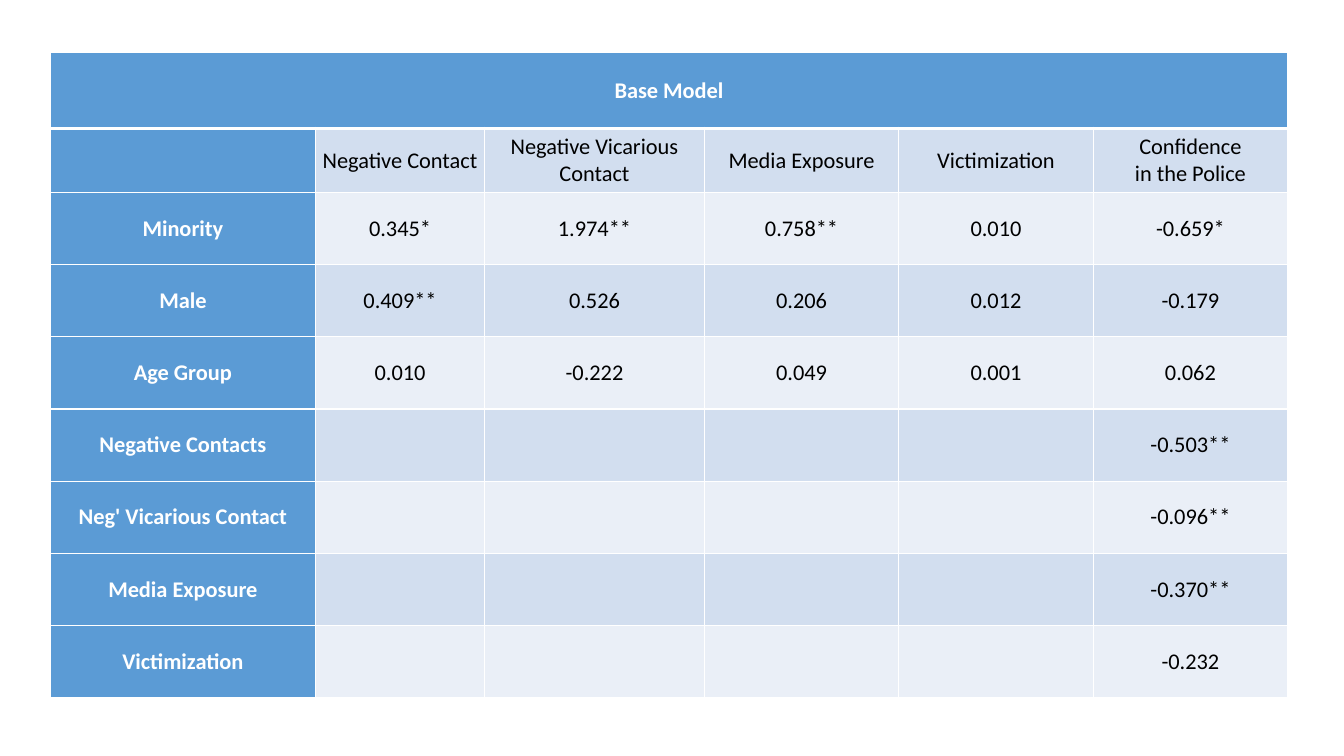
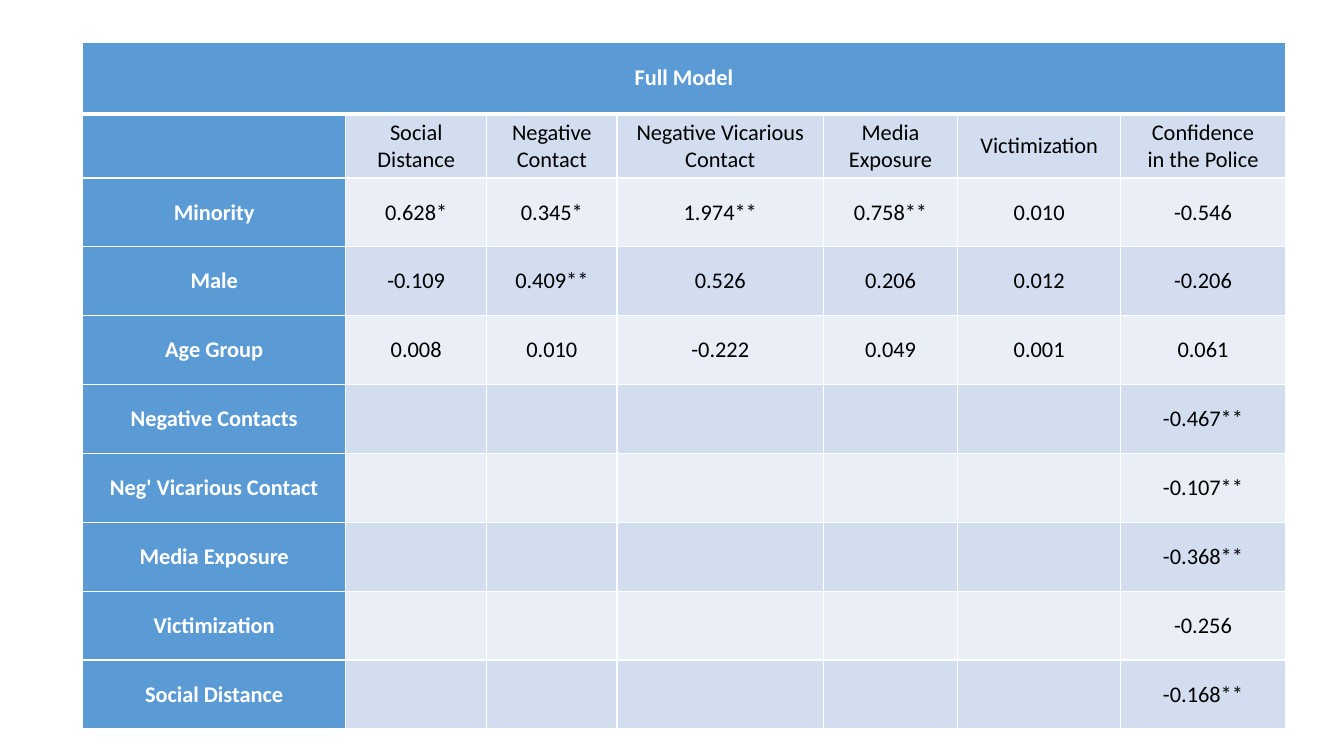
"""Build two slides of regression tables: the base model and the full model."""
from lxml import etree
from pptx import Presentation
from pptx.dml.color import RGBColor
from pptx.enum.text import MSO_ANCHOR, PP_ALIGN
from pptx.oxml.ns import qn
from pptx.util import Emu, Pt

MIDDLE = MSO_ANCHOR.MIDDLE
CENTER = PP_ALIGN.CENTER
BLANK_LAYOUT = 6
EMU_PER_PX = 3810
EMU_PER_POINT = 12700

FONT = "Calibri"
TEXT_SIZE = 16
WHITE = "FFFFFF"
BLACK = "000000"
HEADER_BLUE = "5B9BD5"
BAND_FILLS = ("EAEFF7", "D2DEEF")
THIN, THICK = 1, 3
CELL_INSET = 17
HEADING_HEIGHT = 152

BASE_HEADINGS = ["Negative Contact", "Negative Vicarious Contact",
                 "Media Exposure", "Victimization",
                 "Confidence\nin the Police"]

BASE_MODEL = {
    "title": "Base Model",
    "left": 120, "top": 125,
    "widths": [631, 403, 523, 463, 463, 463],
    "title_height": 181, "row_height": 172,
    "headings": BASE_HEADINGS,
    "rows": [
        ("Minority", "0.345*", "1.974**", "0.758**", "0.010", "-0.659*"),
        ("Male", "0.409**", "0.526", "0.206", "0.012", "-0.179"),
        ("Age Group", "0.010", "-0.222", "0.049", "0.001", "0.062"),
        ("Negative Contacts", "-0.503**"),
        ("Neg' Vicarious Contact", "-0.096**"),
        ("Media Exposure", "-0.370**"),
        ("Victimization", "-0.232"),
    ],
}

FULL_MODEL = {
    "title": "Full Model",
    "left": 197, "top": 101,
    "widths": [626, 336, 310, 492, 319, 389, 391],
    "title_height": 171, "row_height": 164,
    "headings": ["Social Distance"] + BASE_HEADINGS,
    "rows": [
        ("Minority", "0.628*", "0.345*", "1.974**", "0.758**", "0.010", "-0.546"),
        ("Male", "-0.109", "0.409**", "0.526", "0.206", "0.012", "-0.206"),
        ("Age Group", "0.008", "0.010", "-0.222", "0.049", "0.001", "0.061"),
        ("Negative Contacts", "-0.467**"),
        ("Neg' Vicarious Contact", "-0.107**"),
        ("Media Exposure", "-0.368**"),
        ("Victimization", "-0.256"),
        ("Social Distance", "-0.168**"),
    ],
}


def px(length):
    """Turn whole pixels into EMU."""
    return Emu(length * EMU_PER_PX)


def color(hex_string):
    """Turn a hex string into a colour."""
    return RGBColor.from_string(hex_string)


def set_borders(cell, top=THIN, bottom=THIN):
    """Draw white lines, with widths in points, round a cell."""
    properties = cell._tc.get_or_add_tcPr()
    widths = {"a:lnL": THIN, "a:lnR": THIN, "a:lnT": top, "a:lnB": bottom}
    for tag, width in widths.items():
        line = etree.SubElement(properties, qn(tag), w=str(width * EMU_PER_POINT))
        fill = etree.SubElement(line, qn("a:solidFill"))
        etree.SubElement(fill, qn("a:srgbClr"), val=WHITE)


def write_text(cell, text, ink=BLACK, bold=False):
    """Write centred text into a cell, one paragraph a line."""
    cell.vertical_anchor = MIDDLE
    cell.margin_left = cell.margin_right = px(CELL_INSET)
    cell.margin_top = cell.margin_bottom = 0
    cell.text_frame.text = text
    for para in cell.text_frame.paragraphs:
        para.alignment = CENTER
        for span in para.runs:
            span.font.name = FONT
            span.font.size = Pt(TEXT_SIZE)
            span.font.bold = bold
            span.font.color.rgb = color(ink)


def format_cell(cell, text, row, column):
    """Style a cell by its place in the table and write its text."""
    is_header = row == 0 or column == 0
    set_borders(cell, top=THICK if row == 1 else THIN,
                bottom=THICK if row == 0 else THIN)
    cell.fill.solid()
    cell.fill.fore_color.rgb = color(HEADER_BLUE if is_header else BAND_FILLS[row % 2])
    if text:
        write_text(cell, text, ink=WHITE if is_header else BLACK, bold=is_header)


def full_row(label, values, column_count):
    """Put the label first and the values in the last columns."""
    return [label] + [""] * (column_count - 1 - len(values)) + list(values)


def add_model_table(page, model):
    """Add the table of one regression model to a page."""
    widths = model["widths"]
    count = len(widths)
    grid = [full_row(model["title"], [], count),
            full_row("", model["headings"], count)]
    grid += [full_row(label, values, count) for label, *values in model["rows"]]
    heights = [model["title_height"], HEADING_HEIGHT]
    heights += [model["row_height"]] * len(model["rows"])

    frame = page.shapes.add_table(len(grid), count, px(model["left"]), px(model["top"]),
                                  px(sum(widths)), px(sum(heights)))
    table = frame.table
    for column, width in zip(table.columns, widths):
        column.width = px(width)
    for row, height in zip(table.rows, heights):
        row.height = px(height)
    for row, texts in enumerate(grid):
        for column, text in enumerate(texts):
            format_cell(table.cell(row, column), text, row, column)
    table.cell(0, 0).merge(table.cell(0, count - 1))


def main():
    """Build and save the deck."""
    deck = Presentation()
    deck.slide_width, deck.slide_height = px(3200), px(1800)
    for model in (BASE_MODEL, FULL_MODEL):
        page = deck.slides.add_slide(deck.slide_layouts[BLANK_LAYOUT])
        add_model_table(page, model)
    deck.save("out.pptx")


if __name__ == "__main__":
    main()
